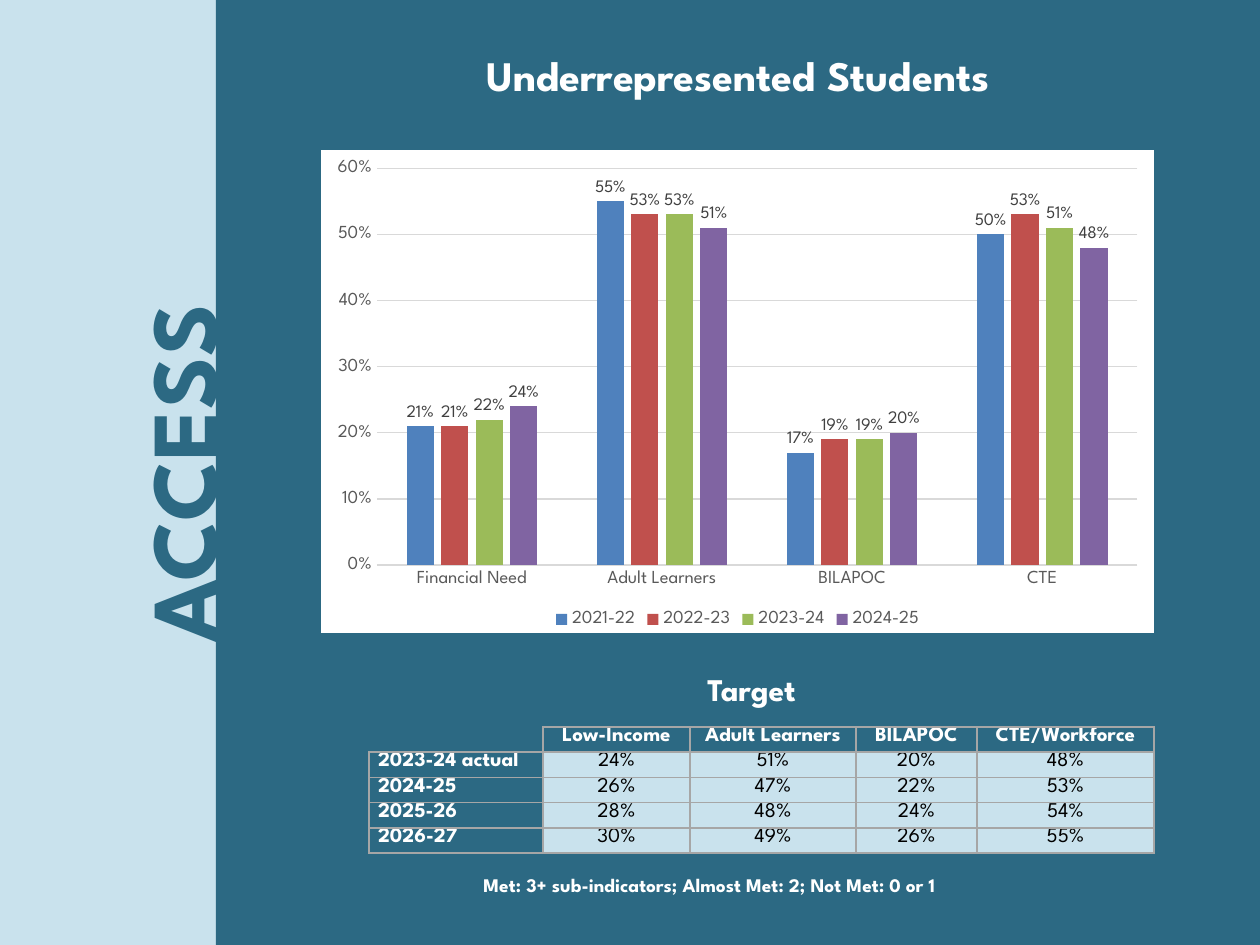
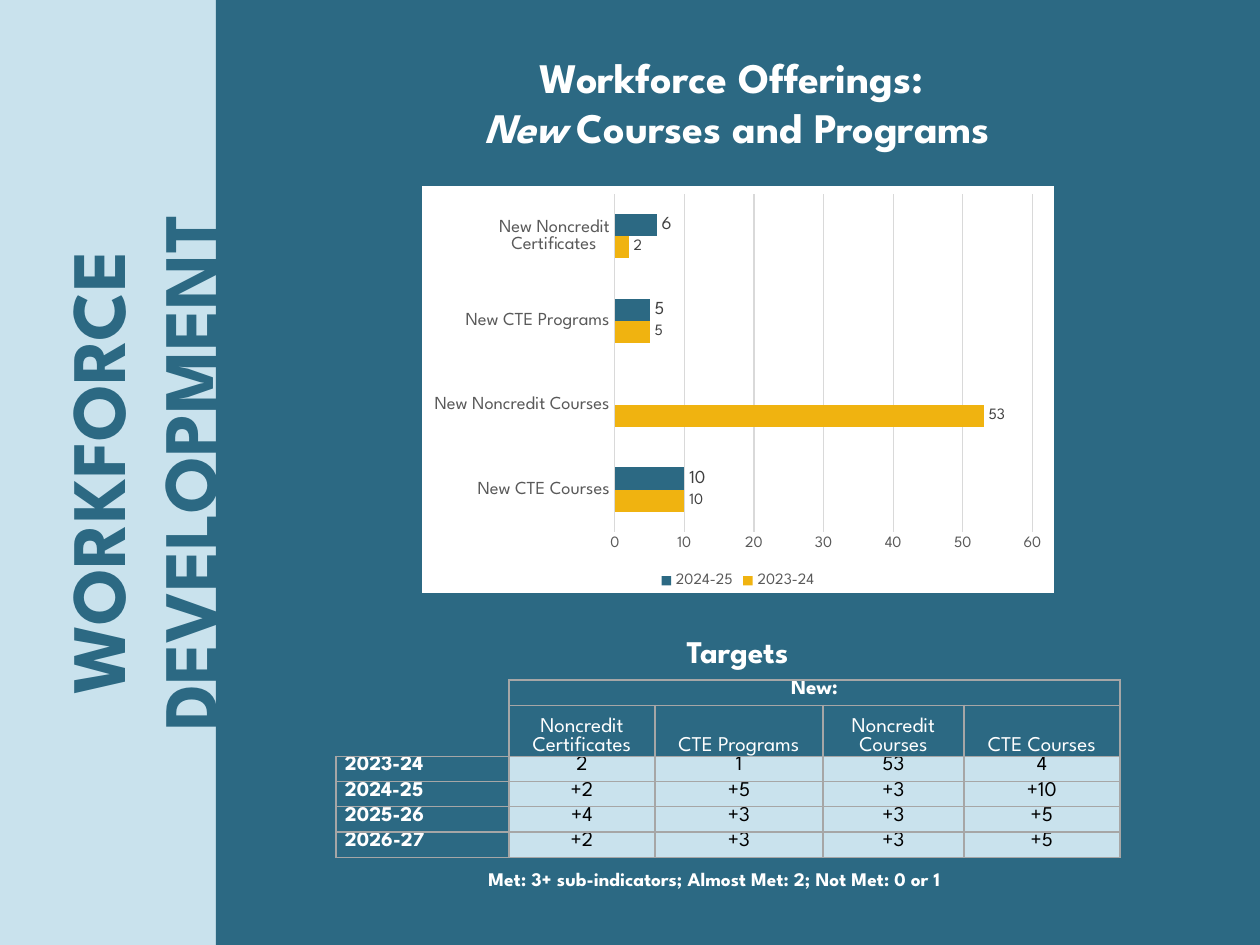
from dataclasses import dataclass
from typing import NamedTuple, Optional

from lxml import etree
from pptx import Presentation
from pptx import util as u
from pptx.chart.data import CategoryChartData
from pptx.dml.color import RGBColor
from pptx.enum import chart as ch
from pptx.enum import shapes, text
from pptx.oxml import ns

EMU_PER_PX = 914400 / 126
FONT = "League Spartan"
FOOTNOTE = "Met: 3+ sub-indicators; Almost Met: 2; Not Met: 0 or 1"
COLORS = {
    "white": "FFFFFF", "black": "000000", "teal": "2C6983", "pale": "C9E2ED",
    "blue": "4F81BD", "red": "C0504D", "green": "9BBB59", "purple": "8064A2",
    "gold": "F0B310", "border": "A6A6A6", "grid": "D9D9D9",
    "axis": "595959", "label": "404040",
}


class Box(NamedTuple):
    left: int
    top: int
    width: int
    height: int


class Run(NamedTuple):
    text: str
    italic: bool = False


class Series(NamedTuple):
    name: str
    values: list[Optional[float]]
    color: str
    label_size: float
    label_format: str


@dataclass
class ChartSpec:
    box: Box
    kind: ch.XL_CHART_TYPE
    categories: list[str]
    series: list[Series]
    gap: int
    overlap: int
    maximum: float
    step: float
    number_format: str
    value_size: float


@dataclass
class TableSpec:
    left: int
    top: int
    widths: list[int]
    heights: list[int]
    header_rows: int
    rows: list[list[str]]


@dataclass
class Page:
    label: str
    label_size: int
    label_box: Box
    title: list[list[Run]]
    title_box: Box
    heading: str
    heading_box: Box
    chart: ChartSpec
    table: TableSpec
    footnote_box: Box


PAGES = [
    Page(
        "ACCESS", 54, Box(-292, 410, 945, 127),
        [[Run("Underrepresented Students")]], Box(256, 43, 964, 63),
        "Target", Box(514, 664, 475, 52),
        ChartSpec(
            Box(321, 150, 833, 483), ch.XL_CHART_TYPE.COLUMN_CLUSTERED,
            ["Financial Need", "Adult Learners", "BILAPOC", "CTE"],
            [Series("2021-22", [0.21, 0.55, 0.17, 0.50], "blue", 10, "0%"),
             Series("2022-23", [0.21, 0.53, 0.19, 0.53], "red", 10, "0%"),
             Series("2023-24", [0.22, 0.53, 0.19, 0.51], "green", 10, "0%"),
             Series("2024-25", [0.24, 0.51, 0.20, 0.48], "purple", 10, "0%")],
            gap=219, overlap=-27, maximum=0.6, step=0.1,
            number_format="0%", value_size=10.5),
        TableSpec(
            369, 727, [174, 147, 166, 121, 177], [25] * 5, 1,
            [["", "Low-Income", "Adult Learners", "BILAPOC", "CTE/Workforce"],
             ["2023-24 actual", "24%", "51%", "20%", "48%"],
             ["2024-25", "26%", "47%", "22%", "53%"],
             ["2025-26", "28%", "48%", "24%", "54%"],
             ["2026-27", "30%", "49%", "26%", "55%"]]),
        Box(471, 867, 737, 37)),
    Page(
        "WORKFORCE DEVELOPMENT", 44, Box(-331, 373, 945, 199),
        [[Run("Workforce Offerings: ")],
         [Run("New", italic=True), Run(" Courses and Programs")]],
        Box(255, 45, 964, 115),
        "Targets", Box(500, 626, 475, 52),
        ChartSpec(
            Box(422, 186, 632, 407), ch.XL_CHART_TYPE.BAR_CLUSTERED,
            ["New CTE Courses", "New Noncredit Courses", "New CTE Programs",
             "New Noncredit Certificates"],
            [Series("2023-24", [10, 53, 5, 2], "gold", 9, "0"),
             Series("2024-25", [10, None, 5, 6], "teal", 10.5, "0")],
            gap=182, overlap=0, maximum=60, step=10,
            number_format="0", value_size=9),
        TableSpec(
            336, 680, [173, 146, 168, 141, 156], [25, 51] + [25] * 4, 2,
            [["", "New:", "", "", ""],
             ["", "Noncredit Certificates", "CTE Programs",
              "Noncredit Courses", "CTE Courses"],
             ["2023-24", "2", "1", "53", "4"],
             ["2024-25", "+2", "+5", "+3", "+10"],
             ["2025-26", "+4", "+3", "+3", "+5"],
             ["2026-27", "+2", "+3", "+3", "+5"]]),
        Box(476, 861, 737, 37)),
]


def px(n: float) -> int:
    return round(n * EMU_PER_PX)


def emu(box: Box) -> list[int]:
    return [px(n) for n in box]


def rgb(name: str) -> RGBColor:
    return RGBColor.from_string(COLORS[name])


def set_font(font, size: float, color: str, bold: bool = False, italic: bool = False) -> None:
    font.name, font.size = FONT, u.Pt(size)
    font.bold, font.italic = bold, italic
    font.color.rgb = rgb(color)


def add_panel(slide, box: Box, color: str) -> None:
    sp = slide.shapes.add_shape(shapes.MSO_SHAPE.RECTANGLE, *emu(box))
    sp.shadow.inherit = False
    sp.fill.solid()
    sp.fill.fore_color.rgb = rgb(color)
    sp.line.fill.background()


def add_label(slide, box: Box, words: str, size: int, color: str = "white",
              align=text.PP_ALIGN.CENTER):
    sp = slide.shapes.add_textbox(*emu(box))
    tf = sp.text_frame
    tf.word_wrap = True
    tf.text = words
    p = tf.paragraphs[0]
    p.alignment = align
    set_font(p.runs[0].font, size, color, bold=True)
    return sp


def place_title(slide, lines: list[list[Run]], box: Box) -> None:
    sp = slide.shapes.title
    slide.shapes._spTree.append(sp._element)  # in front of the panels
    sp.left, sp.top, sp.width, sp.height = emu(box)
    tf = sp.text_frame
    tf.word_wrap, tf.auto_size = True, text.MSO_AUTO_SIZE.NONE
    tf.vertical_anchor = text.MSO_ANCHOR.TOP
    for i, line in enumerate(lines):
        p = tf.add_paragraph() if i else tf.paragraphs[0]
        p.alignment = text.PP_ALIGN.CENTER
        for part in line:
            r = p.add_run()
            r.text = part.text
            set_font(r.font, 24, "white", bold=True, italic=part.italic)


def fill_chart_area(chart, color: str) -> None:
    sp_pr = etree.Element(ns.qn("c:spPr"))
    fill = etree.SubElement(sp_pr, ns.qn("a:solidFill"))
    etree.SubElement(fill, ns.qn("a:srgbClr"), val=COLORS[color])
    line = etree.SubElement(sp_pr, ns.qn("a:ln"))
    etree.SubElement(line, ns.qn("a:noFill"))
    chart._chartSpace.find(ns.qn("c:chart")).addnext(sp_pr)


def add_chart(slide, spec: ChartSpec) -> None:
    data = CategoryChartData(number_format=spec.number_format)
    data.categories = spec.categories
    for s in spec.series:
        data.add_series(s.name, s.values)
    chart = slide.shapes.add_chart(spec.kind, *emu(spec.box), data).chart
    set_font(chart.font, 10, "black")
    fill_chart_area(chart, "white")
    chart.has_title = False
    chart.has_legend = True
    chart.legend.position = ch.XL_LEGEND_POSITION.BOTTOM
    chart.legend.include_in_layout = False
    set_font(chart.legend.font, spec.value_size, "axis")

    cat, val = chart.category_axis, chart.value_axis
    for axis, size in ((cat, 10.5), (val, spec.value_size)):
        axis.major_tick_mark = axis.minor_tick_mark = ch.XL_TICK_MARK.NONE
        set_font(axis.tick_labels.font, size, "axis")
    val.minimum_scale, val.maximum_scale = 0, spec.maximum
    val.major_unit = spec.step
    val.tick_labels.number_format = spec.number_format
    val.tick_labels.number_format_is_linked = False
    val.format.line.fill.background()
    for line in (cat.format.line, val.major_gridlines.format.line):
        line.color.rgb, line.width = rgb("grid"), u.Pt(0.75)

    plot = chart.plots[0]
    plot.gap_width, plot.overlap = spec.gap, spec.overlap
    plot.vary_by_categories = False
    for s, drawn in zip(spec.series, plot.series):
        drawn.format.fill.solid()
        drawn.format.fill.fore_color.rgb = rgb(s.color)
        labels = drawn.data_labels
        labels.show_value = True
        labels.position = ch.XL_LABEL_POSITION.OUTSIDE_END
        labels.number_format = s.label_format
        labels.number_format_is_linked = False
        set_font(labels.font, s.label_size, "label")


def set_borders(cell, visible: str) -> None:
    """Draw the sides named in visible (L, R, T, B) and hide the others."""
    tc_pr = cell._tc.get_or_add_tcPr()
    for i, side in enumerate("LRTB"):
        line = etree.Element(ns.qn(f"a:ln{side}"), w=str(u.Pt(1)))
        if side in visible:
            fill = etree.SubElement(line, ns.qn("a:solidFill"))
            etree.SubElement(fill, ns.qn("a:srgbClr"), val=COLORS["border"])
        else:
            etree.SubElement(line, ns.qn("a:noFill"))
        tc_pr.insert(i, line)


def format_cell(cell, words: str, row: int, col: int, header_rows: int) -> None:
    is_header, is_year = row < header_rows, col == 0
    is_value = not is_header and not is_year
    cell.margin_left = cell.margin_right = px(9)
    cell.margin_top = cell.margin_bottom = 0
    cell.fill.solid()
    cell.fill.fore_color.rgb = rgb("pale" if is_value else "teal")
    if is_header and is_year:
        set_borders(cell, "RB" if row == header_rows - 1 else "R")
    else:
        set_borders(cell, "LRTB")
    p = cell.text_frame.paragraphs[0]
    if not words:
        etree.SubElement(p._p, ns.qn("a:endParaRPr"), sz="1200")
        return
    p.text = words
    p.alignment = text.PP_ALIGN.LEFT if is_year else text.PP_ALIGN.CENTER
    if row == 1 and is_header:
        cell.vertical_anchor = text.MSO_ANCHOR.BOTTOM
    set_font(p.runs[0].font, 12, "black" if is_value else "white",
             bold=is_year or row == 0)


def add_table(slide, spec: TableSpec) -> None:
    box = Box(spec.left, spec.top, sum(spec.widths), sum(spec.heights))
    table = slide.shapes.add_table(
        len(spec.heights), len(spec.widths), *emu(box)).table
    table.first_row = table.horz_banding = False
    for column, width in zip(table.columns, spec.widths):
        column.width = px(width)
    for row, height in zip(table.rows, spec.heights):
        row.height = px(height)
    for i, row in enumerate(spec.rows):
        for j, words in enumerate(row):
            format_cell(table.cell(i, j), words, i, j, spec.header_rows)
    if spec.header_rows == 2:
        table.cell(0, 1).merge(table.cell(0, len(spec.widths) - 1))


def add_page(prs, page: Page) -> None:
    slide = prs.slides.add_slide(prs.slide_layouts[5])
    add_panel(slide, Box(0, 0, 216, 945), "pale")
    add_panel(slide, Box(216, 0, 1044, 945), "teal")
    side = add_label(slide, page.label_box, page.label, page.label_size, "teal")
    side.rotation = 270
    place_title(slide, page.title, page.title_box)
    add_label(slide, page.heading_box, page.heading, 18)
    add_chart(slide, page.chart)
    add_table(slide, page.table)
    add_label(slide, page.footnote_box, FOOTNOTE, 11, align=text.PP_ALIGN.LEFT)


def main() -> None:
    prs = Presentation()
    prs.slide_width, prs.slide_height = px(1260), px(945)
    for page in PAGES:
        add_page(prs, page)
    prs.save("out.pptx")


if __name__ == "__main__":
    main()
